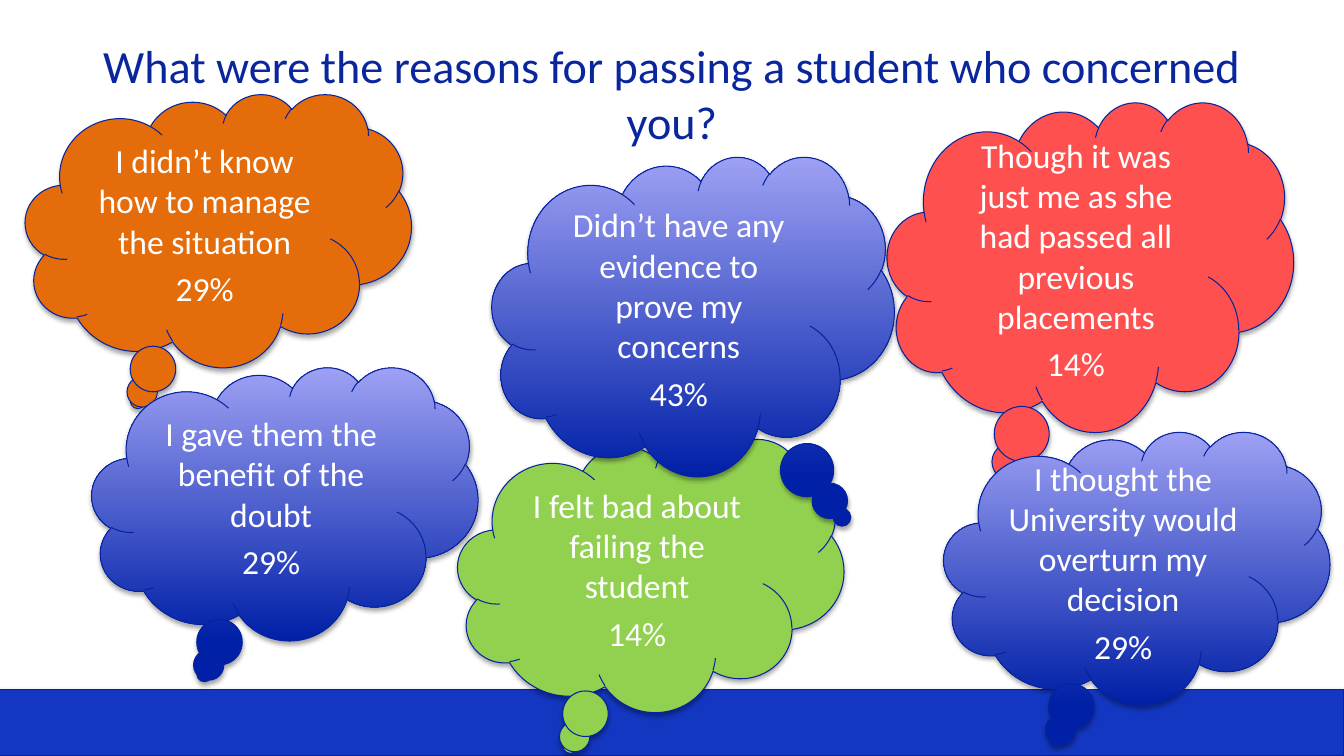
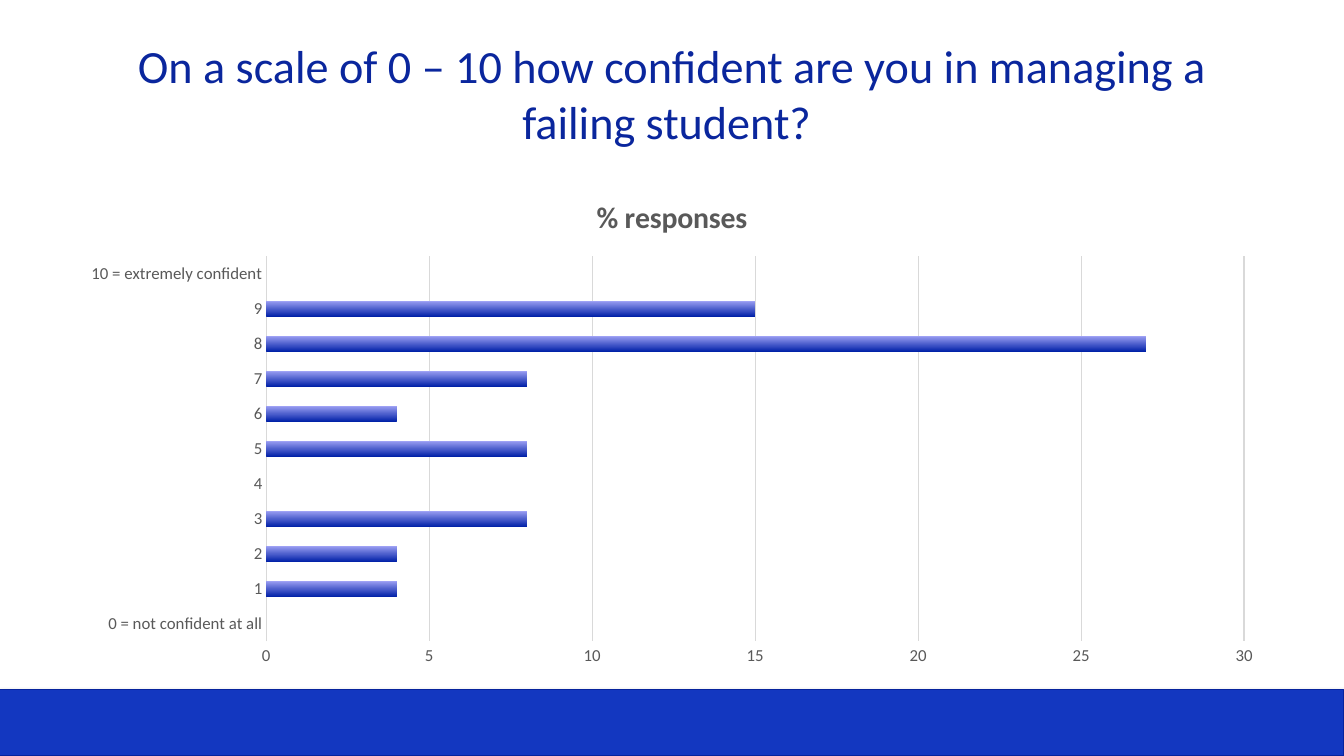
import pptx
import pptx.chart.data
import pptx.dml.color
import pptx.enum.chart
import pptx.enum.shapes
import pptx.enum.text
import pptx.oxml
import pptx.oxml.ns
import pptx.util

# Shared look
FONT = "Calibri"
WHITE, NAVY, OUTLINE, BAND = "FFFFFF", "0A269D", "06239D", "1337C0"
ORANGE, GREEN, RED = "E46C0A", "92D050", "FF5050"
BLUE_FADE = ("0020A7", "9EA1F4")  # bottom to top
GREY_TEXT, GRID = "595959", "D9D9D9"

SLIDE_WIDTH, SLIDE_HEIGHT = pptx.util.Inches(13.33), pptx.util.Inches(7.5)
CLOUD_SIZE = (28.73, 36.13)
SHAPES = pptx.enum.shapes.MSO_SHAPE

# Left, top, width and height in percent of the slide
BAND_BOX = (0, 91.2, 100, 8.8)
TITLE_BOX = (5, 4, 90, 16.67)
CHART_BOX = (5, 23.33, 90, 66)

# Text, share of answers, fill, box and tail position, from back to front
REASONS = [
    ("I didn’t know how to manage the situation", "29%", ORANGE,
     (1.88, 12.4, *CLOUD_SIZE), None),
    ("I gave them the benefit of the doubt", "29%", BLUE_FADE,
     (6.83, 48.53, *CLOUD_SIZE), None),
    ("I felt bad about failing the student", "14%", GREEN,
     (34.06, 58, *CLOUD_SIZE), None),
    ("Though it was just me as she had passed all previous placements", "14%", RED,
     (66.02, 13.47, 30.23, 43.6), None),
    ("I thought the University would overturn my decision", "29%", BLUE_FADE,
     (70.22, 57.07, *CLOUD_SIZE), None),
    ("Didn’t have any evidence to prove my concerns", "43%", BLUE_FADE,
     (36.61, 20.67, 29.93, 42.27), (0.37, 0.63)),
]

CONFIDENCE = ["0 = not confident at all", *map(str, range(1, 10)),
              "10 = extremely confident"]
RESPONSES = [0, 4, 4, 8, 0, 8, 4, 8, 27, 15, None]


def rgb(color):
    return pptx.dml.color.RGBColor.from_string(color)


def place(box):
    left, top, width, height = box
    return [int(SLIDE_WIDTH * left / 100), int(SLIDE_HEIGHT * top / 100),
            int(SLIDE_WIDTH * width / 100), int(SLIDE_HEIGHT * height / 100)]


def set_font(font, size, color, bold=False):
    font.name, font.size, font.bold = FONT, pptx.util.Pt(size), bold
    font.color.rgb = rgb(color)


def set_fill(fill, paint):
    """Fill with one colour, or with a fade from bottom to top."""
    if isinstance(paint, str):
        fill.solid()
        fill.fore_color.rgb = rgb(paint)
        return
    fill.gradient()
    fill.gradient_angle = 90
    for stop, color in zip(fill.gradient_stops, paint):
        stop.color.rgb = rgb(color)


def set_line(line, color, width):
    set_fill(line.fill, color)
    line.width = pptx.util.Pt(width)


def write(frame, *lines, size=24, color=WHITE, space=0):
    """Write centred paragraphs in the middle of a text frame."""
    frame.word_wrap = True
    frame.vertical_anchor = pptx.enum.text.MSO_ANCHOR.MIDDLE
    for index, line in enumerate(lines):
        paragraph = frame.add_paragraph() if index else frame.paragraphs[0]
        paragraph.alignment = pptx.enum.text.PP_ALIGN.CENTER
        if index:
            paragraph.space_before = pptx.util.Pt(space)
        run = paragraph.add_run()
        run.text = line
        set_font(run.font, size, color)


def add_shadow(shape, color):
    shape.shadow.inherit = False
    effects = shape.element.spPr.find(pptx.oxml.ns.qn("a:effectLst"))
    effects.append(pptx.oxml.parse_xml(
        f'<a:outerShdw {pptx.oxml.ns.nsdecls("a")} blurRad="40000" dist="23000"'
        f' dir="5400000" rotWithShape="0"><a:srgbClr val="{color}">'
        '<a:alpha val="35000"/></a:srgbClr></a:outerShdw>'))


def add_panel(slide, kind, box, paint, shadow):
    panel = slide.shapes.add_shape(kind, *place(box))
    set_fill(panel.fill, paint)
    set_line(panel.line, OUTLINE, 0.75)
    add_shadow(panel, shadow)
    return panel


def add_slide(deck, title):
    """Blank slide with the bottom band and a title."""
    slide = deck.slides.add_slide(deck.slide_layouts[6])
    add_panel(slide, SHAPES.RECTANGLE, BAND_BOX, BAND, "808080")
    heading = slide.shapes.add_textbox(*place(TITLE_BOX))
    write(heading.text_frame, title, size=33, color=NAVY)
    return slide


def add_cloud(slide, reason, percent, paint, box, tail):
    cloud = add_panel(slide, SHAPES.CLOUD_CALLOUT, box, paint, "000000")
    if tail:
        cloud.adjustments[0], cloud.adjustments[1] = tail
    write(cloud.text_frame, reason, percent, space=5)


def style_axis(axis):
    axis.major_tick_mark = axis.minor_tick_mark = pptx.enum.chart.XL_TICK_MARK.NONE
    set_font(axis.tick_labels.font, 12, GREY_TEXT)


def add_bar_chart(slide, title, categories, values):
    data = pptx.chart.data.CategoryChartData()
    data.categories = categories
    data.add_series(title, values)
    chart = slide.shapes.add_chart(
        pptx.enum.chart.XL_CHART_TYPE.BAR_CLUSTERED, *place(CHART_BOX), data).chart
    set_font(chart.font, 10, "000000")
    chart.has_legend = False

    # Title
    chart.has_title = True
    chart.chart_title.include_in_layout = False
    heading = chart.chart_title.text_frame
    heading.text = title
    set_font(heading.paragraphs[0].runs[0].font, 21.3, GREY_TEXT, bold=True)

    # Axes
    style_axis(chart.category_axis)
    chart.category_axis.has_major_gridlines = False
    set_line(chart.category_axis.format.line, GRID, 1)
    scale = chart.value_axis
    style_axis(scale)
    scale.minimum_scale, scale.maximum_scale, scale.major_unit = 0, 30, 5
    scale.format.line.fill.background()
    scale.has_major_gridlines = True
    set_line(scale.major_gridlines.format.line, GRID, 0.75)

    # Bars
    bars = chart.plots[0]
    bars.vary_by_categories = False
    bars.gap_width, bars.overlap = 115, -20
    set_fill(bars.series[0].format.fill, BLUE_FADE)


def main():
    deck = pptx.Presentation()
    deck.slide_width, deck.slide_height = SLIDE_WIDTH, SLIDE_HEIGHT

    # Reasons for passing
    reasons = add_slide(
        deck, "What were the reasons for passing a student who concerned you?")
    for reason in REASONS:
        add_cloud(reasons, *reason)

    # Confidence ratings
    confidence = add_slide(
        deck, "On a scale of 0 – 10 how confident are you in managing a failing student? ")
    add_bar_chart(confidence, "% responses", CONFIDENCE, RESPONSES)

    deck.save("out.pptx")


if __name__ == "__main__":
    main()
